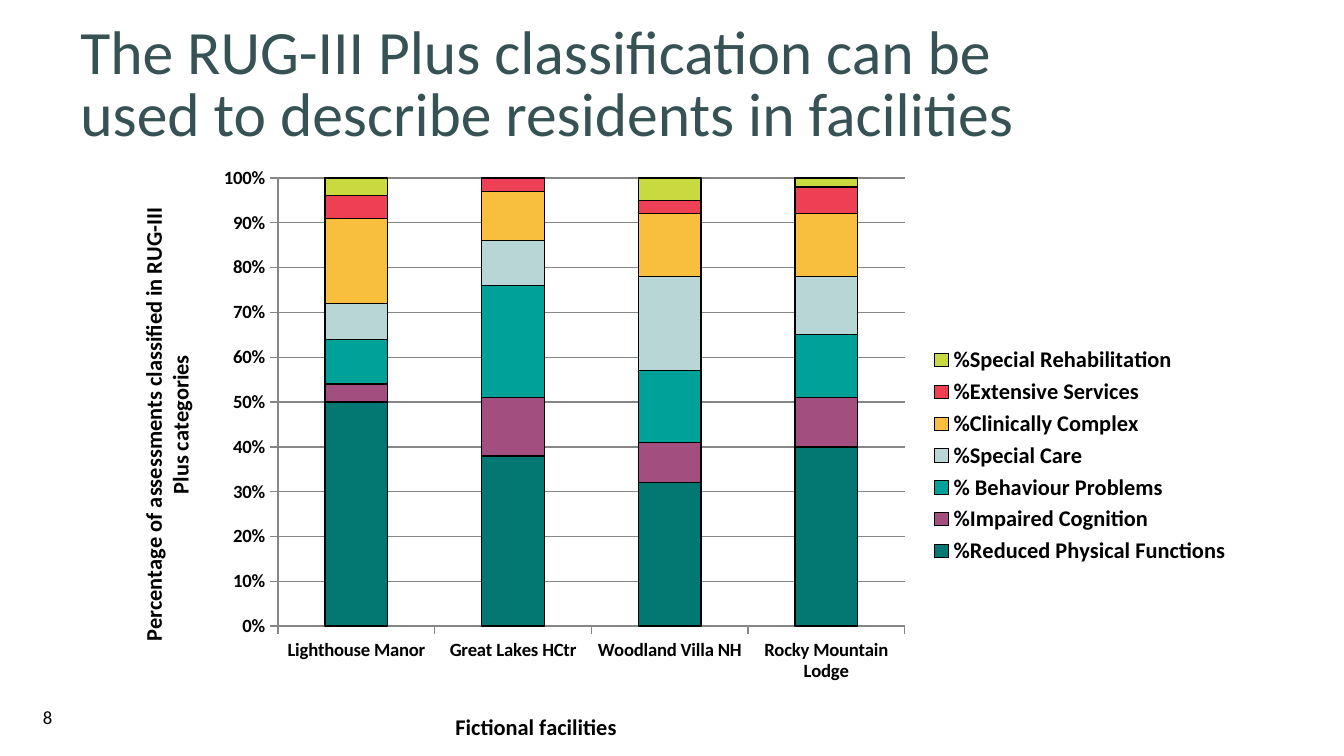
from lxml.etree import SubElement
from pptx import Presentation
from pptx.chart.data import CategoryChartData
from pptx.dml.color import RGBColor
from pptx.enum.chart import XL_CHART_TYPE, XL_LEGEND_POSITION, XL_TICK_MARK
from pptx.enum.text import MSO_ANCHOR, PP_ALIGN
from pptx.oxml.ns import qn
from pptx.util import Inches, Pt

COLORS = {
    "ink": "000000",
    "title": "365254",
    "axis": "868686",
    "physical": "037872",
    "cognition": "A24E7E",
    "behaviour": "00A199",
    "care": "B8D6D6",
    "complex": "F8BF3F",
    "extensive": "ED4054",
    "rehabilitation": "C8DA3F",
}
FACILITIES = ["Lighthouse Manor", "Great Lakes HCtr", "Woodland Villa NH", "Rocky Mountain Lodge"]
GROUPS = [
    ("%Reduced Physical Functions", "physical", (50, 38, 32, 40)),
    ("%Impaired Cognition", "cognition", (4, 13, 9, 11)),
    ("% Behaviour Problems", "behaviour", (10, 25, 16, 14)),
    ("%Special Care", "care", (8, 10, 21, 13)),
    ("%Clinically Complex", "complex", (19, 11, 14, 14)),
    ("%Extensive Services", "extensive", (5, 3, 3, 6)),
    ("%Special Rehabilitation", "rehabilitation", (4, 0, 5, 2)),
]


def color(name):
    return RGBColor.from_string(COLORS[name])


def format_font(font, size, tint="ink", bold=False):
    font.name = "Calibri"
    font.size = Pt(size)
    font.bold = bold
    font.color.rgb = color(tint)


def write(frame, text, size, tint="ink", bold=False, align=PP_ALIGN.LEFT, spacing=None):
    for index, line in enumerate(text.split("\n")):
        para = frame.add_paragraph() if index else frame.paragraphs[0]
        para.alignment = align
        if spacing:
            para.line_spacing = Pt(spacing)
        span = para.add_run()
        span.text = line
        format_font(span.font, size, tint, bold)


def set_layout(parent, before, inner=False, **shares):
    for old in parent.findall(qn("c:layout")):
        parent.remove(old)
    layout = SubElement(parent, qn("c:layout"))
    manual = SubElement(layout, qn("c:manualLayout"))
    if inner:
        SubElement(manual, qn("c:layoutTarget")).set("val", "inner")
    for side in "xy":
        SubElement(manual, qn(f"c:{side}Mode")).set("val", "edge")
    for key, share in shares.items():
        SubElement(manual, qn(f"c:{key}")).set("val", str(share))
    parent.insert(before, layout)


class SlideBuilder:
    def __init__(self, width):
        self.deck = Presentation()
        self.deck.slide_width = Inches(width)
        self.deck.slide_height = Inches(width * 9 / 16)
        self.page = self.deck.slides.add_slide(self.deck.slide_layouts[6])

    def area(self, left, top, width, height):
        across, down = self.deck.slide_width, self.deck.slide_height
        return [int(share * size) for share, size in
                zip((left, top, width, height), (across, down, across, down))]

    def text(self, shares, text, size, anchor=MSO_ANCHOR.TOP, inset=None, **style):
        frame = self.page.shapes.add_textbox(*self.area(*shares)).text_frame
        frame.word_wrap = True
        frame.vertical_anchor = anchor
        if inset is not None:
            frame.margin_left = frame.margin_right = Inches(inset)
            frame.margin_top = frame.margin_bottom = Inches(inset)
        write(frame, text, size, **style)

    def axis(self, axis, title, left, top):
        axis.major_tick_mark = XL_TICK_MARK.OUTSIDE
        axis.minor_tick_mark = XL_TICK_MARK.NONE
        axis.format.line.color.rgb = color("axis")
        format_font(axis.tick_labels.font, 10, bold=True)
        write(axis.axis_title.text_frame, title, 12, bold=True, align=PP_ALIGN.CENTER)
        set_layout(axis.axis_title._element, 1, x=left, y=top)

    def stacked_chart(self, shares, categories, groups, category_title, value_title):
        data = CategoryChartData()
        data.categories = categories
        for name, _, values in groups:
            data.add_series(name, values)
        chart = self.page.shapes.add_chart(
            XL_CHART_TYPE.COLUMN_STACKED_100, *self.area(*shares), data).chart
        chart.has_title = False
        format_font(chart.font, 10)
        plot = chart.plots[0]
        plot.gap_width, plot.overlap, plot.vary_by_categories = 150, 100, False
        for series, (_, tint, _) in zip(plot.series, groups):
            series.format.fill.solid()
            series.format.fill.fore_color.rgb = color(tint)
            series.format.line.color.rgb = color("ink")
            series.format.line.width = Pt(0.75)
        self.axis(chart.category_axis, category_title, 0.3, 0.92)
        values = chart.value_axis
        self.axis(values, value_title, 0.02, 0.08)
        values.minimum_scale, values.maximum_scale, values.major_unit = 0, 1, 0.1
        values.tick_labels.number_format = "0%"
        values.tick_labels.number_format_is_linked = False
        values.has_major_gridlines = True
        values.major_gridlines.format.line.color.rgb = color("axis")
        chart.has_legend = True
        legend = chart.legend
        legend.position = XL_LEGEND_POSITION.RIGHT
        legend.include_in_layout = False
        format_font(legend.font, 12, bold=True)
        set_layout(legend._element, 1, x=0.715, y=0.31, w=0.28, h=0.38)
        set_layout(chart._chartSpace.chart.plotArea, 0, inner=True, x=0.147, y=0.037, w=0.553, h=0.747)

    def save(self):
        self.deck.save("out.pptx")


def main():
    slide = SlideBuilder(10)
    slide.text((0.004, 0.934, 0.063, 0.03), "8", 10, anchor=MSO_ANCHOR.MIDDLE, inset=0,
               align=PP_ALIGN.CENTER)
    slide.stacked_chart((0.083, 0.206, 0.843, 0.794), FACILITIES, GROUPS, "Fictional facilities",
                        "Percentage of assessments classified in RUG-III Plus categories")
    slide.text((0.05, 0.025, 0.93, 0.165),
               "The RUG-III Plus classification can be\nused to describe residents in facilities",
               33, tint="title", spacing=33)
    slide.save()


if __name__ == "__main__":
    main()
